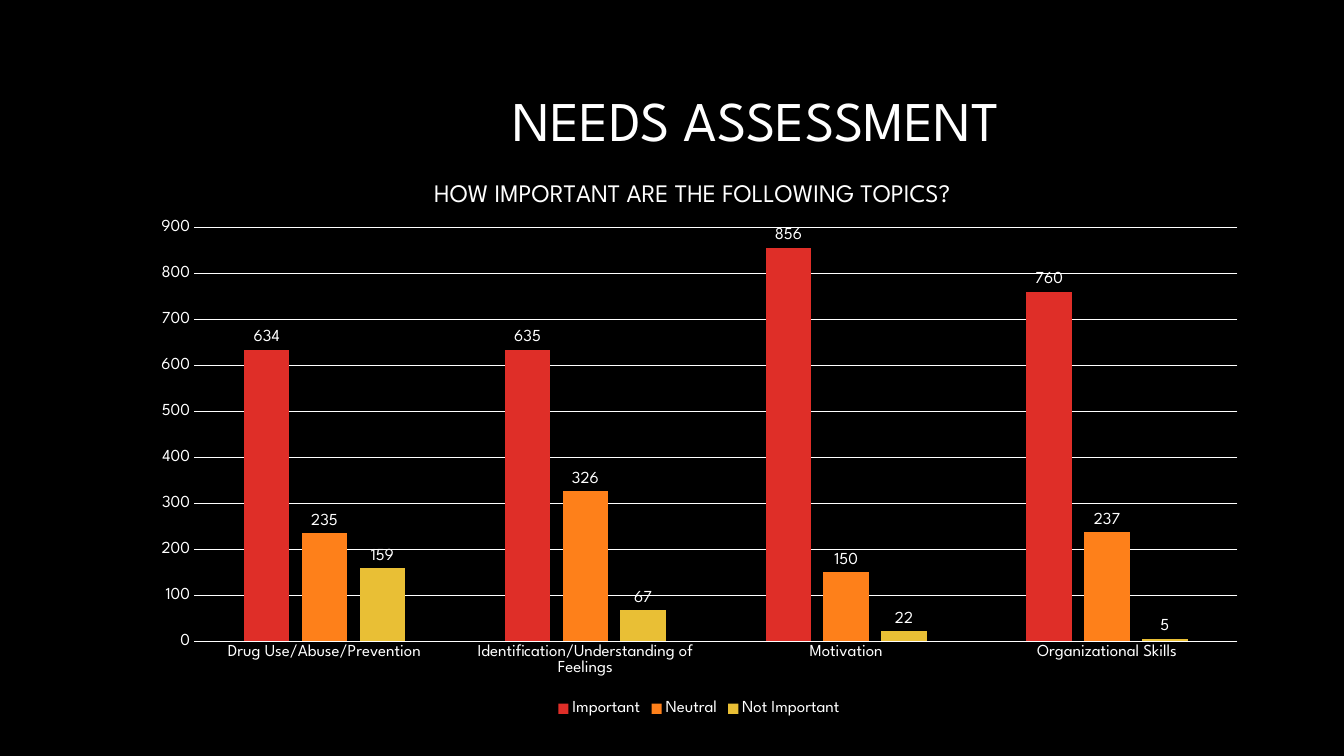
"""Build the needs assessment slide with its clustered column chart."""
import pptx
import pptx.chart.data
import pptx.dml.color
import pptx.enum.chart
import pptx.enum.text
import pptx.oxml
import pptx.oxml.ns
import pptx.util

Pt = pptx.util.Pt
FONT = "League Spartan"
WHITE = "FFFFFF"
BLACK = "000000"

HEADING = "NEEDS ASSESSMENT"
QUESTION = "HOW IMPORTANT ARE THE FOLLOWING TOPICS?"
TOPICS = [
    "Drug Use/Abuse/Prevention",
    "Identification/Understanding of Feelings",
    "Motivation",
    "Organizational Skills",
]
RATINGS = [
    ("Important", "DF2E28", (634, 635, 856, 760)),
    ("Neutral", "FE801A", (235, 326, 150, 237)),
    ("Not Important", "E9BF35", (159, 67, 22, 5)),
]
HEADING_BOX = (200.9, 37.4, 678.2, 101.5)
CHART_BOX = (98.6, 110.2, 801.4, 404.6)
QUESTION_SPOT = {"x": 0.26, "y": 0.04}
PLOT_SPOT = {"x": 0.05, "y": 0.13, "w": 0.93, "h": 0.73}


def rgb(code):
    return pptx.dml.color.RGBColor.from_string(code)


def style(font, size):
    font.name = FONT
    font.size = Pt(size)
    font.bold = False
    font.color.rgb = rgb(WHITE)


def draw_line(line):
    line.color.rgb = rgb(WHITE)
    line.width = Pt(0.75)


def place(part, position, spot, inner=False):
    for old in part.findall(pptx.oxml.ns.qn("c:layout")):
        part.remove(old)
    target = '<c:layoutTarget val="inner"/>' if inner else ""
    modes = "".join(f'<c:{side}Mode val="edge"/>' for side in "xy")
    sizes = "".join(f'<c:{key} val="{value}"/>' for key, value in spot.items())
    part.insert(position, pptx.oxml.parse_xml(
        f'<c:layout {pptx.oxml.ns.nsdecls("c")}><c:manualLayout>'
        f"{target}{modes}{sizes}</c:manualLayout></c:layout>"))


def add_heading(slide):
    heading = slide.shapes.title
    heading.left, heading.top, heading.width, heading.height = map(Pt, HEADING_BOX)
    frame = heading.text_frame
    frame.word_wrap = True
    frame.vertical_anchor = pptx.enum.text.MSO_ANCHOR.MIDDLE
    paragraph = frame.paragraphs[0]
    paragraph.alignment = pptx.enum.text.PP_ALIGN.CENTER
    paragraph.line_spacing = 0.9
    run = paragraph.add_run()
    run.text = HEADING
    style(run.font, 40)


def add_ratings_chart(slide):
    ratings = pptx.chart.data.CategoryChartData()
    ratings.categories = TOPICS
    for name, _, counts in RATINGS:
        ratings.add_series(name, counts)
    chart = slide.shapes.add_chart(
        pptx.enum.chart.XL_CHART_TYPE.COLUMN_CLUSTERED,
        *map(Pt, CHART_BOX), ratings).chart
    style(chart.font, 10)

    chart.has_title = True
    run = chart.chart_title.text_frame.paragraphs[0].add_run()
    run.text = QUESTION
    style(run.font, 18)
    chart.chart_title.include_in_layout = False
    place(chart.chart_title._element, 1, QUESTION_SPOT)
    plot_area = chart._chartSpace.find(".//" + pptx.oxml.ns.qn("c:plotArea"))
    place(plot_area, 0, PLOT_SPOT, inner=True)

    chart.has_legend = True
    chart.legend.position = pptx.enum.chart.XL_LEGEND_POSITION.BOTTOM
    chart.legend.include_in_layout = False
    style(chart.legend.font, 12)

    topics, counts = chart.category_axis, chart.value_axis
    for axis in (topics, counts):
        axis.major_tick_mark = pptx.enum.chart.XL_TICK_MARK.NONE
        axis.minor_tick_mark = pptx.enum.chart.XL_TICK_MARK.NONE
        style(axis.tick_labels.font, 12)
    draw_line(topics.format.line)
    counts.format.line.fill.background()
    counts.has_major_gridlines = True
    draw_line(counts.major_gridlines.format.line)
    counts.minimum_scale, counts.maximum_scale = 0, 900
    counts.major_unit = 100

    plot = chart.plots[0]
    plot.gap_width = 219
    plot.overlap = -27
    plot.vary_by_categories = False
    for series, (_, color, _) in zip(plot.series, RATINGS):
        series.format.fill.solid()
        series.format.fill.fore_color.rgb = rgb(color)
        labels = series.data_labels
        labels.show_value = True
        labels.position = pptx.enum.chart.XL_LABEL_POSITION.OUTSIDE_END
        style(labels.font, 12)


def main():
    deck = pptx.Presentation()
    deck.slide_width, deck.slide_height = Pt(960), Pt(540)
    slide = deck.slides.add_slide(deck.slide_layouts[5])
    slide.background.fill.solid()
    slide.background.fill.fore_color.rgb = rgb(BLACK)
    add_heading(slide)
    add_ratings_chart(slide)
    deck.save("out.pptx")


if __name__ == "__main__":
    main()
